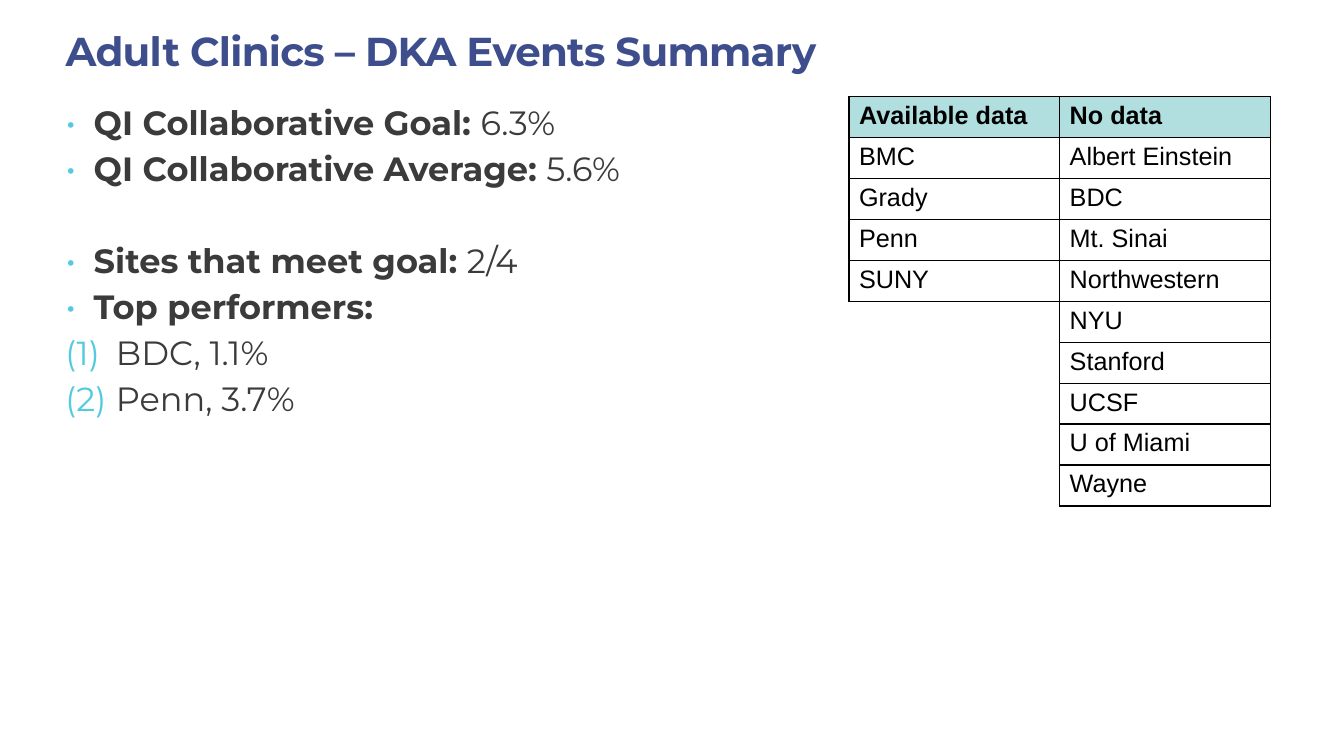
from dataclasses import dataclass
from itertools import zip_longest

from lxml import etree
from pptx import Presentation
from pptx.dml.color import RGBColor
from pptx.enum import text
from pptx.oxml import ns
from pptx.util import Inches, Pt


@dataclass(frozen=True)
class Theme:
    heading_font: str = "Montserrat"
    table_font: str = "Arial"
    title_color: str = "3E4E8D"
    body_color: str = "3B3B3B"
    bullet_color: str = "52CAE0"
    table_color: str = "000000"
    header_fill: str = "B1DFE0"
    title_size: float = 28.8
    body_size: float = 24
    table_size: float = 18
    line_gap: float = 4
    section_gap: float = 37


THEME = Theme()

SUMMARY = [
    ("QI Collaborative Goal: ", "6.3%", THEME.line_gap),
    ("QI Collaborative Average: ", "5.6%", THEME.line_gap),
    ("Sites that meet goal: ", "2/4", THEME.section_gap),
    ("Top performers:", "", THEME.line_gap),
]
TOP_PERFORMERS = ["BDC, 1.1%", "Penn, 3.7%"]
AVAILABLE = ["Available data", "BMC", "Grady", "Penn", "SUNY"]
MISSING = ["No data", "Albert Einstein", "BDC", "Mt. Sinai", "Northwestern",
           "NYU", "Stanford", "UCSF", "U of Miami", "Wayne"]


def add_element(parent, tag, **attributes):
    return etree.SubElement(parent, ns.qn(tag), attributes)


def set_font(font, name, size, color, bold=None):
    font.name = name
    font.size = Pt(size)
    font.color.rgb = RGBColor.from_string(color)
    font.bold = bold


def set_frame(frame, anchor):
    frame.word_wrap = True
    frame.auto_size = text.MSO_AUTO_SIZE.NONE
    frame.vertical_anchor = anchor
    frame.margin_left = frame.margin_right = Inches(0.05)
    frame.margin_top = frame.margin_bottom = Inches(0.05)


def add_title(slide, wording):
    title = slide.shapes.title
    title.left, title.top = Inches(0.6), Inches(0.25)
    title.width, title.height = Inches(12), Inches(0.5)
    set_frame(title.text_frame, text.MSO_ANCHOR.MIDDLE)
    heading = title.text_frame.paragraphs[0]
    heading.text = wording
    heading.alignment = text.PP_ALIGN.LEFT
    set_font(heading.font, THEME.heading_font, THEME.title_size, THEME.title_color, True)
    heading.font._element.set("spc", "-50")


def add_marker(paragraph, indent, size, tag, **attributes):
    properties = paragraph._p.get_or_add_pPr()
    properties.set("marL", str(Inches(indent)))
    properties.set("indent", str(-Inches(indent)))
    add_element(add_element(properties, "a:buClr"), "a:srgbClr", val=THEME.bullet_color)
    add_element(properties, "a:buSzPct", val=str(size * 1000))
    add_element(properties, "a:buFont", typeface=THEME.heading_font)
    add_element(properties, tag, **attributes)


def add_summary(slide):
    summary = slide.shapes.add_textbox(Inches(0.6), Inches(0.96), Inches(7.6), Inches(5.61))
    frame = summary.text_frame
    set_frame(frame, text.MSO_ANCHOR.TOP)
    for index, (label, value, gap) in enumerate(SUMMARY):
        line = frame.add_paragraph() if index else frame.paragraphs[0]
        add_marker(line, 0.28, 110, "a:buChar", char="•")
        if index:
            line.space_before = Pt(gap)
        set_font(line.font, THEME.heading_font, THEME.body_size, THEME.body_color)
        for wording, bold in ((label, True), (value, False)):
            if wording:
                run = line.add_run()
                run.text = wording
                run.font.bold = bold
    for performer in TOP_PERFORMERS:
        line = frame.add_paragraph()
        line.text = performer
        add_marker(line, 0.5, 99, "a:buAutoNum", type="arabicParenBoth")
        line.space_before = Pt(THEME.line_gap)
        set_font(line.font, THEME.heading_font, THEME.body_size, THEME.body_color, False)


def set_borders(cell, visible_sides):
    properties = cell._tc.get_or_add_tcPr()
    for position, side in enumerate("LRTB"):
        border = etree.Element(ns.qn(f"a:ln{side}"), w=str(Pt(1)))
        if side in visible_sides:
            add_element(add_element(border, "a:solidFill"), "a:srgbClr", val=THEME.table_color)
        else:
            add_element(border, "a:noFill")
        properties.insert(position, border)


def add_site_table(slide):
    rows = list(zip_longest(AVAILABLE, MISSING, fillvalue=""))
    table = slide.shapes.add_table(
        len(rows), 2, Inches(8.42), Inches(0.96), Inches(4.18), Inches(4.06)
    ).table
    table.first_row = table.horz_banding = False
    for row_index, sites in enumerate(rows):
        is_header = row_index == 0
        for column_index, site in enumerate(sites):
            cell = table.cell(row_index, column_index)
            if is_header:
                cell.fill.solid()
                cell.fill.fore_color.rgb = RGBColor.from_string(THEME.header_fill)
            else:
                cell.fill.background()
            line = cell.text_frame.paragraphs[0]
            line.text = site
            set_font(line.font, THEME.table_font, THEME.table_size, THEME.table_color, is_header)
            first_blank = row_index == len(AVAILABLE)
            set_borders(cell, "LRTB" if site else "RT" if first_blank else "R")


def main():
    deck = Presentation()
    deck.slide_width, deck.slide_height = Inches(13.33), Inches(7.5)
    slide = deck.slides.add_slide(deck.slide_layouts.get_by_name("Title Only"))
    add_title(slide, "Adult Clinics – DKA Events Summary")
    add_summary(slide)
    add_site_table(slide)
    deck.save("out.pptx")


if __name__ == "__main__":
    main()
